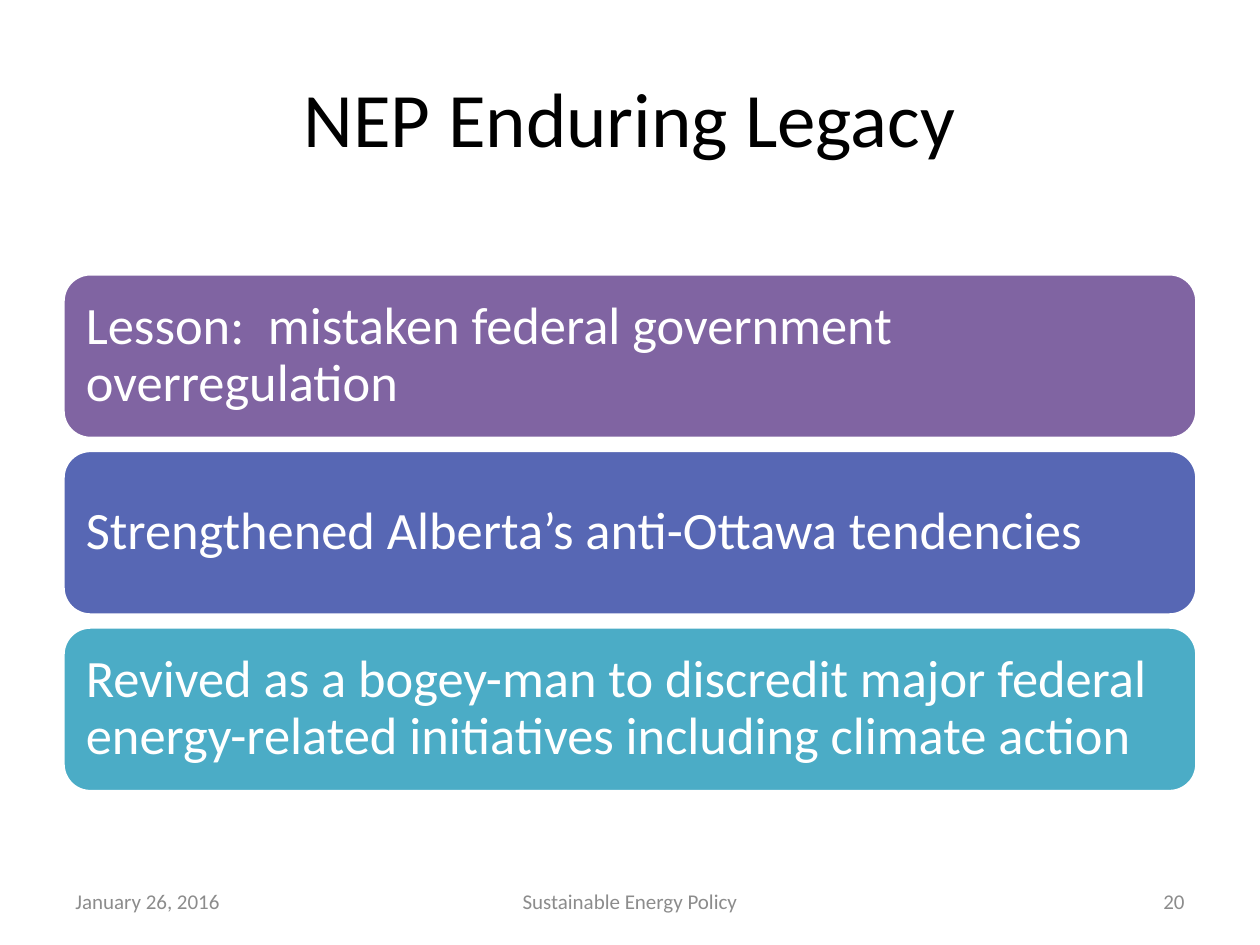
from pptx import Presentation
from pptx.dml.color import RGBColor
from pptx.enum.shapes import MSO_SHAPE
from pptx.enum.text import MSO_ANCHOR, PP_ALIGN
from pptx.util import Cm, Pt

TITLE = "NEP Enduring Legacy"
LEGACIES = [
    ("Lesson:  mistaken federal government overregulation", "8064A2"),
    ("Strengthened Alberta’s anti-Ottawa tendencies", "5767B4"),
    ("Revived as a bogey-man to discredit major federal energy-related "
     "initiatives including climate action", "4BACC6"),
]
FOOTERS = [
    ("January 26, 2016", 1.27, 5.92, PP_ALIGN.LEFT),
    ("Sustainable Energy Policy", 8.68, 8.04, PP_ALIGN.CENTER),
    ("20", 18.21, 5.92, PP_ALIGN.RIGHT),
]

SLIDE_WIDTH, SLIDE_HEIGHT = 25.4, 19.05
MARGIN = 1.27
CONTENT_WIDTH = SLIDE_WIDTH - 2 * MARGIN
BAR_TOP, BAR_HEIGHT, BAR_STEP = 5.52, 3.32, 3.56
BAR_INSET = 0.3


def color(value):
    return RGBColor.from_string(value)


def write(shape, text, size, text_color, alignment):
    frame = shape.text_frame
    frame.word_wrap = True
    frame.vertical_anchor = MSO_ANCHOR.MIDDLE
    paragraph = frame.paragraphs[0]
    paragraph.text = text
    paragraph.alignment = alignment
    paragraph.font.name = "Calibri"
    paragraph.font.size = Pt(size)
    paragraph.font.color.rgb = color(text_color)
    return frame


def add_text(slide, text, left, top, width, height, size, text_color, alignment):
    box = slide.shapes.add_textbox(Cm(left), Cm(top), Cm(width), Cm(height))
    write(box, text, size, text_color, alignment)


def add_bar(slide, text, fill, top):
    bar = slide.shapes.add_shape(
        MSO_SHAPE.ROUNDED_RECTANGLE,
        Cm(MARGIN), Cm(top), Cm(CONTENT_WIDTH), Cm(BAR_HEIGHT))
    bar.shadow.inherit = False
    bar.fill.solid()
    bar.fill.fore_color.rgb = color(fill)
    bar.line.color.rgb = color("FFFFFF")
    bar.line.width = Pt(2)
    frame = write(bar, text, 30, "FFFFFF", PP_ALIGN.LEFT)
    frame.margin_left = frame.margin_right = Cm(BAR_INSET)
    frame.margin_top = frame.margin_bottom = Cm(BAR_INSET)
    frame.paragraphs[0].line_spacing = 0.9


def main():
    presentation = Presentation()
    presentation.slide_width = Cm(SLIDE_WIDTH)
    presentation.slide_height = Cm(SLIDE_HEIGHT)
    slide = presentation.slides.add_slide(presentation.slide_layouts[6])

    add_text(slide, TITLE, MARGIN, 0.76, CONTENT_WIDTH, 3.18,
             44, "000000", PP_ALIGN.CENTER)
    for index, (text, fill) in enumerate(LEGACIES):
        add_bar(slide, text, fill, BAR_TOP + index * BAR_STEP)
    for text, left, width, alignment in FOOTERS:
        add_text(slide, text, left, 17.65, width, 1.02, 12, "8C8C8C", alignment)

    presentation.save("out.pptx")


if __name__ == "__main__":
    main()
